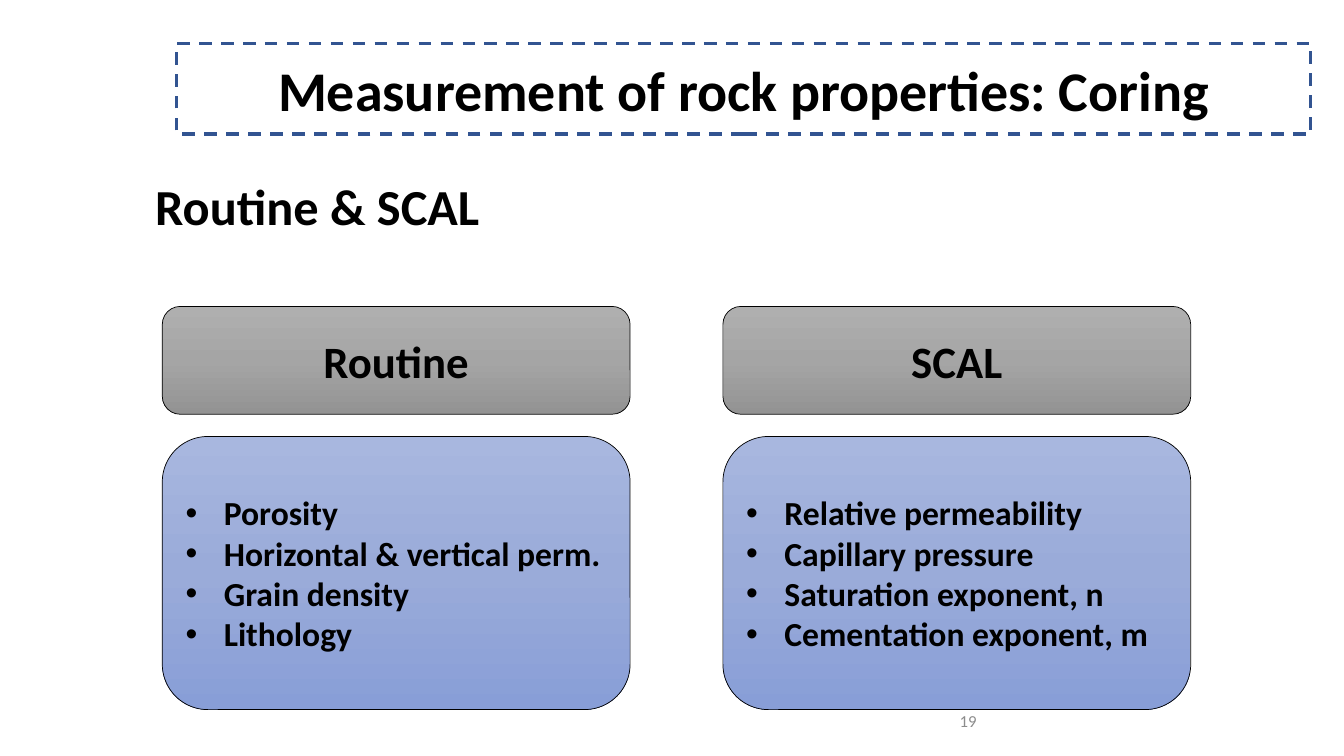
"""Build the slide on routine and special core analysis."""
from copy import deepcopy

from lxml import etree
from pptx import Presentation
from pptx.dml.color import RGBColor
from pptx.enum import dml, shapes, text
from pptx.oxml.ns import qn
from pptx.util import Inches, Pt

BLACK = RGBColor(0x00, 0x00, 0x00)
WHITE = RGBColor(0xFF, 0xFF, 0xFF)
NAVY = RGBColor(0x32, 0x54, 0x91)
MUTED = RGBColor(0x8C, 0x8C, 0x8C)
GRAYS = [RGBColor(0xAF, 0xAF, 0xAF), RGBColor(0xA5, 0xA5, 0xA5),
         RGBColor(0x93, 0x93, 0x93)]
BLUES = [RGBColor(0xA8, 0xB7, 0xDF), RGBColor(0x9A, 0xAB, 0xD9),
         RGBColor(0x88, 0x9E, 0xD7)]
FONT = "Calibri"
LEFT, STEP, WIDTH = 1.61, 5.56, 4.64
CARDS = [
    ("Routine", ["Porosity", "Horizontal & vertical perm.",
                 "Grain density", "Lithology"]),
    ("SCAL", ["Relative permeability", "Capillary pressure",
              "Saturation exponent, n", "Cementation exponent, m"]),
]


def write(frame, lines, size, align, color=BLACK, bold=True):
    """Fill a text frame with one run per paragraph."""
    frame.word_wrap = True
    frame.auto_size = text.MSO_AUTO_SIZE.NONE
    frame.vertical_anchor = text.MSO_ANCHOR.MIDDLE
    for i, line in enumerate(lines):
        par = frame.add_paragraph() if i else frame.paragraphs[0]
        par.alignment = align
        run = par.add_run()
        run.text = line
        font = run.font
        font.name, font.size, font.bold = FONT, Pt(size), bold
        font.color.rgb = color


def bullet(par):
    """Give a paragraph a hanging bullet."""
    props = par._p.get_or_add_pPr()
    props.set("marL", str(Inches(0.38)))
    props.set("indent", str(Inches(-0.38)))
    face = etree.SubElement(props, qn("a:buFont"))
    face.set("typeface", "Arial")
    etree.SubElement(props, qn("a:buChar")).set("char", "•")


def shade(shape, colors):
    """Fill a shape with three colours from top to bottom."""
    shape.fill.gradient()
    shape.fill.gradient_angle = 270
    stops = shape._element.spPr.find(qn("a:gradFill")).find(qn("a:gsLst"))
    stops.append(deepcopy(stops[-1]))
    for i, stop in enumerate(shape.fill.gradient_stops):
        stop.position = i / 2
        stop.color.rgb = colors[i]


def panel(slide, box, line, weight):
    """Add a rounded panel with an outline."""
    shape = slide.shapes.add_shape(
        shapes.MSO_SHAPE.ROUNDED_RECTANGLE, *map(Inches, box))
    shape.shadow.inherit = False
    shape.line.color.rgb = line
    shape.line.width = Pt(weight)
    return shape


def title(slide, words):
    """Place the title in a dashed frame."""
    shape = slide.shapes.title
    shape.left, shape.top = Inches(1.75), Inches(0.43)
    shape.width, shape.height = Inches(11.25), Inches(0.9)
    shape.fill.solid()
    shape.fill.fore_color.rgb = WHITE
    shape.line.color.rgb = NAVY
    shape.line.width = Pt(2.25)
    shape.line.dash_style = dml.MSO_LINE.DASH
    write(shape.text_frame, [words], 40, text.PP_ALIGN.CENTER)


def heading(slide, words):
    """Add the section heading."""
    shape = panel(slide, (1.34, 1.57, 9.11, 1.02), WHITE, 1)
    shape.fill.background()
    frame = shape.text_frame
    frame.margin_left = frame.margin_right = Inches(0.15)
    frame.margin_top = frame.margin_bottom = Inches(0.15)
    write(frame, [words], 36, text.PP_ALIGN.LEFT)
    frame.paragraphs[0].line_spacing = 0.9


def card(slide, left, name, items):
    """Add a column: a gray header above a blue list."""
    head = panel(slide, (left, 3.04, WIDTH, 1.07), BLACK, 0.5)
    shade(head, GRAYS)
    write(head.text_frame, [name], 32, text.PP_ALIGN.CENTER)
    body = panel(slide, (left, 4.33, WIDTH, 2.71), BLACK, 0.5)
    shade(body, BLUES)
    write(body.text_frame, items, 24, text.PP_ALIGN.LEFT)
    for par in body.text_frame.paragraphs:
        bullet(par)


def number(slide, words):
    """Add the page number."""
    box = slide.shapes.add_textbox(*map(Inches, (9.42, 6.95, 3, 0.4)))
    write(box.text_frame, [words], 12, text.PP_ALIGN.LEFT, MUTED, False)


def main():
    """Build and save the deck."""
    deck = Presentation()
    deck.slide_width, deck.slide_height = Inches(13.33), Inches(7.5)
    slide = deck.slides.add_slide(deck.slide_layouts.get_by_name("Title Only"))
    title(slide, "Measurement of rock properties: Coring")
    heading(slide, "Routine & SCAL")
    for i, (name, items) in enumerate(CARDS):
        card(slide, LEFT + i * STEP, name, items)
    number(slide, "19")
    deck.save("out.pptx")


if __name__ == "__main__":
    main()
